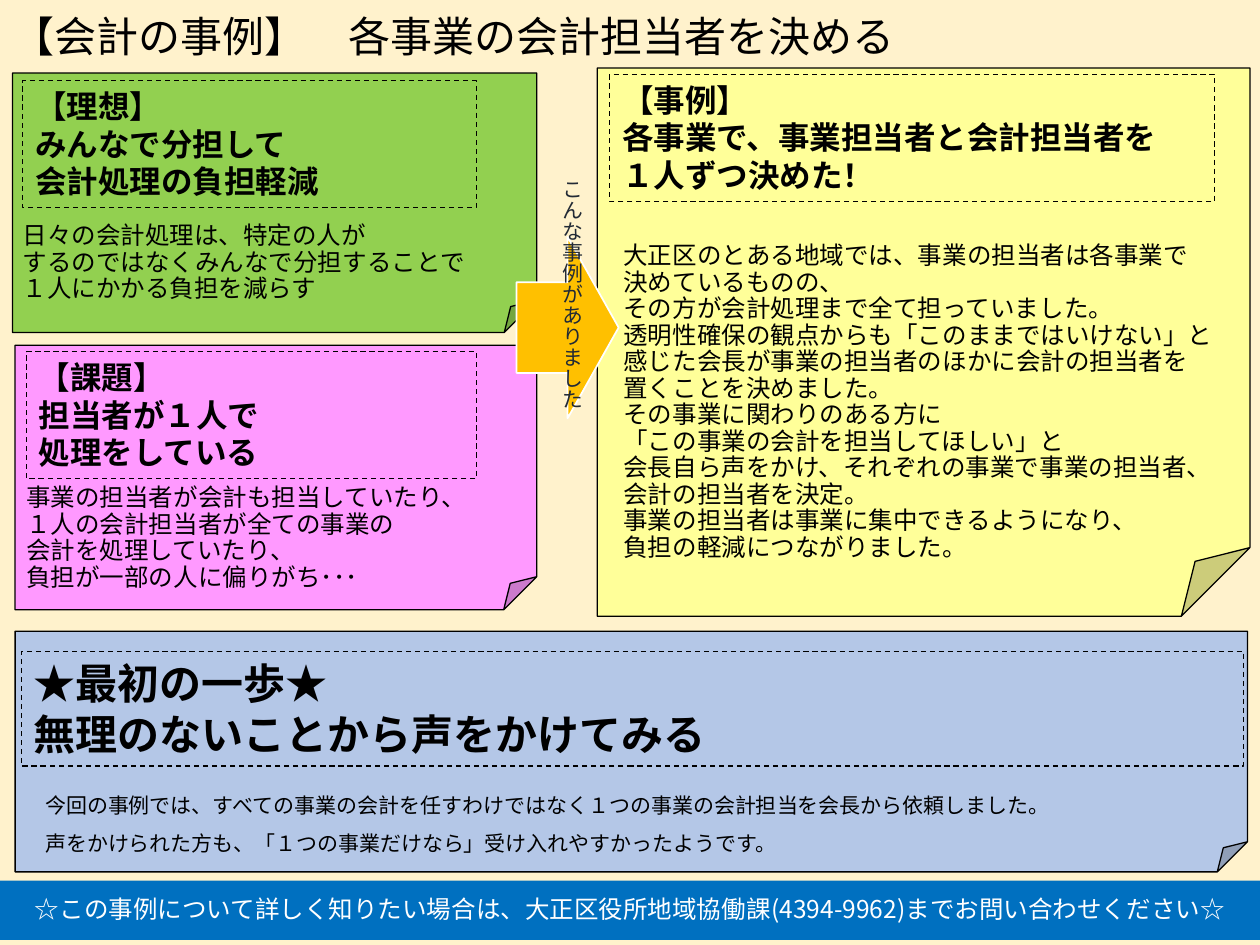
from typing import NamedTuple

from lxml import etree
from pptx import Presentation
from pptx.dml.color import RGBColor
from pptx.enum.dml import MSO_LINE
from pptx.enum.shapes import MSO_SHAPE
from pptx.enum.text import MSO_ANCHOR, MSO_AUTO_SIZE, PP_ALIGN
from pptx.oxml.ns import qn
from pptx.util import Inches, Pt

RECTANGLE = MSO_SHAPE.RECTANGLE
FOLDED_CORNER = MSO_SHAPE.FOLDED_CORNER
RIGHT_ARROW = MSO_SHAPE.RIGHT_ARROW
DASH = MSO_LINE.DASH
TOP, MIDDLE = MSO_ANCHOR.TOP, MSO_ANCHOR.MIDDLE
LEFT, CENTER = PP_ALIGN.LEFT, PP_ALIGN.CENTER
GROW, FIXED = MSO_AUTO_SIZE.SHAPE_TO_FIT_TEXT, MSO_AUTO_SIZE.NONE

FONT = "Noto Sans CJK JP"
COLORS = {
    "page": "FFF2CC", "ideal": "92D050", "problem": "FF99FF",
    "case": "FFFF99", "step": "B4C7E7", "contact": "0070C0",
    "arrow": "FFC000", "caption": "222A35", "ink": "000000", "white": "FFFFFF",
}
WIDTH, HEIGHT = Inches(10), Inches(7.5)
COLUMN, ROW = WIDTH / 100, HEIGHT / 75


class Box(NamedTuple):
    """A place on the grid, in columns and rows."""
    left: float
    top: float
    width: float
    height: float

    def inner(self, left, top, width, height):
        return Box(self.left + left, self.top + top, width, height)

    def lengths(self):
        return (round(self.left * COLUMN), round(self.top * ROW),
                round(self.width * COLUMN), round(self.height * ROW))


def rgb(name):
    return RGBColor.from_string(COLORS[name])


def write(shape, lines, size, color="ink", bold=False, align=LEFT,
          anchor=MIDDLE, spacing=1.0, fit=FIXED):
    frame = shape.text_frame
    frame.word_wrap = True
    frame.auto_size = fit
    frame.vertical_anchor = anchor
    for index, line in enumerate(lines):
        para = frame.paragraphs[0] if index == 0 else frame.add_paragraph()
        para.alignment = align
        para.line_spacing = spacing
        para.space_before = para.space_after = Pt(0)
        span = para.add_run()
        span.text = line
        font = span.font
        font.name, font.size, font.bold = FONT, Pt(size), bold
        font.color.rgb = rgb(color)
        east_asian = etree.Element(qn("a:ea"), typeface=FONT)
        font._element.find(qn("a:latin")).addnext(east_asian)


def add_shape(page, kind, box, fill=None, line=None, line_width=0.75):
    shape = page.shapes.add_shape(kind, *box.lengths())
    shape.shadow.inherit = False
    if fill:
        shape.fill.solid()
        shape.fill.fore_color.rgb = rgb(fill)
    else:
        shape.fill.background()
    if line:
        shape.line.color.rgb = rgb(line)
        shape.line.width = Pt(line_width)
    else:
        shape.line.fill.background()
    return shape


def set_fold(note, share):
    """Set the size of the folded corner, as a share of the shorter side."""
    guides = next(note._element.iter(qn("a:avLst")))
    for guide in list(guides):
        guides.remove(guide)
    etree.SubElement(guides, qn("a:gd"), name="adj",
                     fmla=f"val {round(share * 100000)}")


def add_title(page, box, text):
    title = page.shapes.title
    title.left, title.top, title.width, title.height = box.lengths()
    write(title, [text], 24, spacing=0.9)


def add_panel(page, box, fill, heading_place, heading, body_place, body,
              heading_size=18, body_size=14, body_spacing=0.9):
    """Folded note with a dashed heading; places are offsets within the box."""
    note = add_shape(page, FOLDED_CORNER, box, fill, "ink")
    set_fold(note, 1 / 8)
    frame = add_shape(page, RECTANGLE, box.inner(*heading_place), line="ink")
    frame.line.dash_style = DASH
    write(frame, heading, heading_size, bold=True, anchor=TOP, fit=GROW)
    text = page.shapes.add_textbox(*box.inner(*body_place).lengths())
    write(text, body, body_size, spacing=body_spacing)


def add_contact(page, box, text):
    bar = add_shape(page, RECTANGLE, box, "contact")
    write(bar, [text], 14, "white", align=CENTER, spacing=0.9)


def add_arrow(page, box, text):
    """Arrow with a vertical caption that runs past both ends of it."""
    add_shape(page, RIGHT_ARROW, box, "arrow", "white", 1)
    place = box.inner(1.9, -5.6, 4, 25.1)
    caption = page.shapes.add_textbox(*place.lengths())
    write(caption, [text], 12, "caption", align=CENTER, anchor=TOP, fit=GROW)
    caption.text_frame._txBody.bodyPr.set("vert", "eaVert")


def main():
    deck = Presentation()
    deck.slide_width, deck.slide_height = WIDTH, HEIGHT
    page = deck.slides.add_slide(deck.slide_layouts[5])
    page.background.fill.solid()
    page.background.fill.fore_color.rgb = rgb("page")

    add_title(page, Box(0, -0.1, 89.1, 6.4), "【会計の事例】　各事業の会計担当者を決める")
    add_panel(
        page, Box(1, 5.8, 41.6, 20.6), "ideal",
        (0.8, 0.6, 36, 10.1),
        ["【理想】", "みんなで分担して", "会計処理の負担軽減"],
        (-0.2, 11, 40.2, 8.2),
        ["日々の会計処理は、特定の人が",
         "するのではなくみんなで分担することで",
         "１人にかかる負担を減らす"])
    add_panel(
        page, Box(1.2, 27.4, 41.4, 21), "problem",
        (0.9, 0.5, 35.7, 10.1),
        ["【課題】", "担当者が１人で", "処理をしている"],
        (-0.1, 10.2, 41.5, 10.3),
        ["事業の担当者が会計も担当していたり、",
         "１人の会計担当者が全ての事業の",
         "会計を処理していたり、",
         "負担が一部の人に偏りがち･･･"])
    add_panel(
        page, Box(47.4, 5.4, 51.8, 43.5), "case",
        (1, 0.5, 48, 10.1),
        ["【事例】", "各事業で、事業担当者と会計担当者を", "１人ずつ決めた！"],
        (1.1, 11.2, 50, 30.7),
        ["大正区のとある地域では、事業の担当者は各事業で",
         "決めているものの、",
         "その方が会計処理まで全て担っていました。",
         "透明性確保の観点からも「このままではいけない」と"
         "感じた会長が事業の担当者のほかに会計の担当者を",
         "置くことを決めました。",
         "その事業に関わりのある方に",
         "「この事業の会計を担当してほしい」と",
         "会長自ら声をかけ、それぞれの事業で事業の担当者、会計の担当者を決定。",
         "事業の担当者は事業に集中できるようになり、",
         "負担の軽減につながりました。"])
    add_panel(
        page, Box(1.2, 50.1, 97.8, 19.1), "step",
        (0.5, 1.6, 97, 9.1),
        ["★最初の一歩★", "無理のないことから声をかけてみる"],
        (1.4, 11.6, 93, 6.4),
        ["今回の事例では、すべての事業の会計を任すわけではなく"
         "１つの事業の会計担当を会長から依頼しました。",
         "声をかけられた方も、「１つの事業だけなら」受け入れやすかったようです。"],
        heading_size=24, body_size=12, body_spacing=1.5)
    add_contact(
        page, Box(0, 69.9, 100, 4.7),
        "☆この事例について詳しく知りたい場合は、"
        "大正区役所地域協働課(4394-9962)までお問い合わせください☆")
    add_arrow(page, Box(41, 18.8, 8.1, 14.4), "こんな事例がありました")
    deck.save("out.pptx")


if __name__ == "__main__":
    main()
